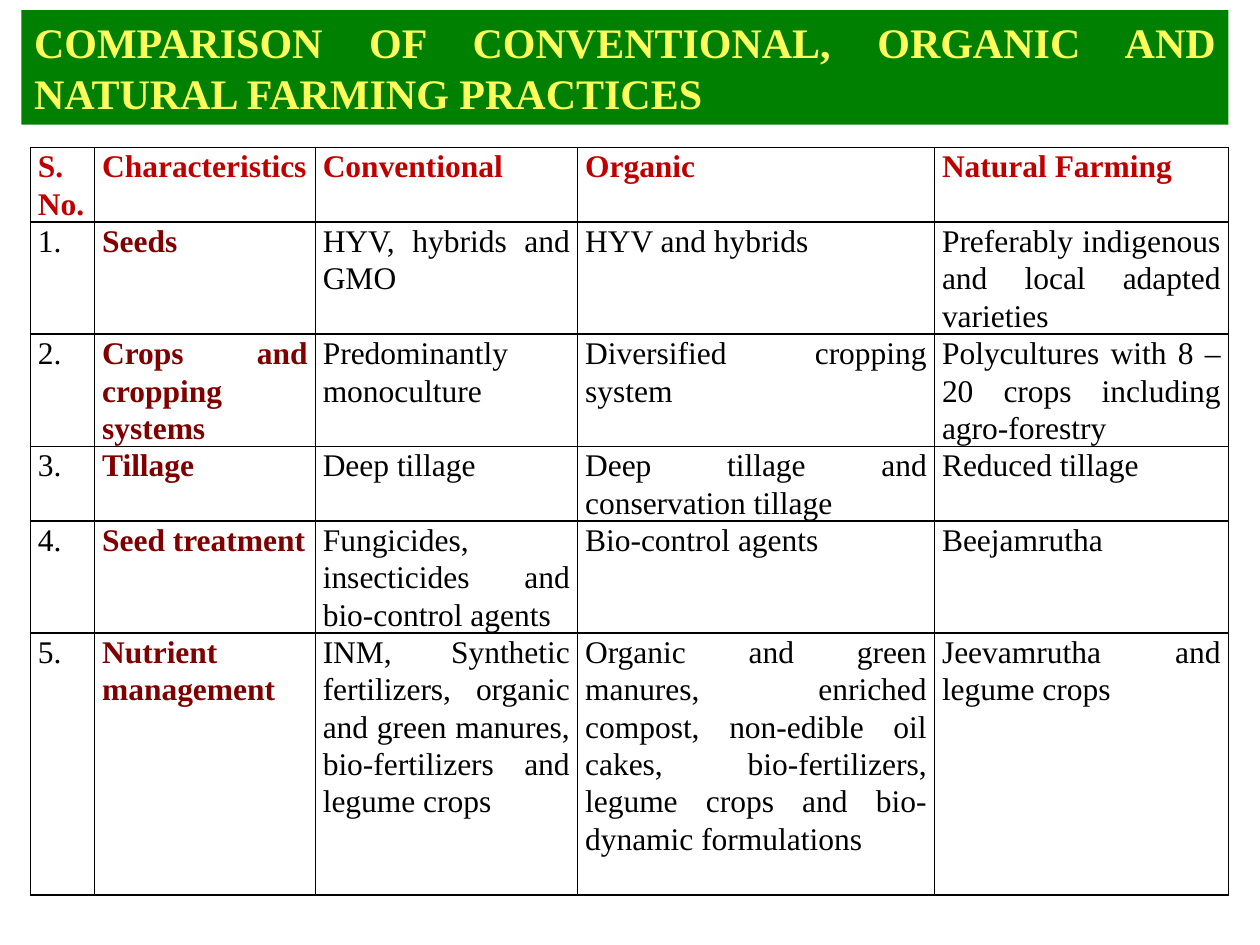
from lxml import etree
from pptx import Presentation
from pptx.dml.color import RGBColor
from pptx.enum.text import MSO_ANCHOR, MSO_AUTO_SIZE, PP_ALIGN
from pptx.oxml.ns import qn
from pptx.util import Inches, Pt

JUSTIFY = PP_ALIGN.JUSTIFY
TOP, MIDDLE = MSO_ANCHOR.TOP, MSO_ANCHOR.MIDDLE
NO_AUTOFIT = MSO_AUTO_SIZE.NONE
TITLE_ONLY_LAYOUT = 5

FONT = "Times New Roman"
COLORS = {
    "banner": "008000",
    "banner_text": "FFFF5C",
    "header": "C00000",
    "characteristic": "800000",
    "body": "000000",
    "border": "000000",
}

COLUMN_WIDTHS = [0.51, 1.75, 2.08, 2.83, 2.33]
ROW_HEIGHTS = [0.59, 0.89, 0.89, 0.59, 0.89, 2.08]
HEADERS = ["S. No.", "Characteristics", "Conventional", "Organic", "Natural Farming"]
PRACTICES = [
    ["Seeds", "HYV, hybrids and GMO", "HYV and hybrids",
     "Preferably indigenous and local adapted varieties"],
    ["Crops and cropping systems", "Predominantly monoculture",
     "Diversified cropping system",
     "Polycultures with 8 – 20 crops including agro-forestry"],
    ["Tillage", "Deep tillage", "Deep tillage and conservation tillage",
     "Reduced tillage"],
    ["Seed treatment", "Fungicides, insecticides and bio-control agents",
     "Bio-control agents", "Beejamrutha"],
    ["Nutrient management",
     "INM, Synthetic fertilizers, organic and green manures, "
     "bio-fertilizers and legume crops",
     "Organic and green manures, enriched compost, non-edible oil cakes, "
     "bio-fertilizers, legume crops and bio-dynamic formulations",
     "Jeevamrutha and legume crops"],
]


def write_text(text_frame, text, *, size, color, bold=False,
               line_spacing=1.0, space_after=0):
    text_frame.word_wrap = True
    paragraph = text_frame.paragraphs[0]
    paragraph.alignment = JUSTIFY
    paragraph.line_spacing = line_spacing
    paragraph.space_after = Pt(space_after)
    run = paragraph.add_run()
    run.text = text
    run.font.name = FONT
    run.font.size = Pt(size)
    run.font.bold = bold
    run.font.color.rgb = RGBColor.from_string(COLORS[color])


def set_cell_borders(cell, color, width):
    properties = cell._tc.get_or_add_tcPr()
    for position, side in enumerate(("lnL", "lnR", "lnT", "lnB")):
        line = etree.Element(qn(f"a:{side}"), w=str(Pt(width)))
        fill = etree.SubElement(line, qn("a:solidFill"))
        etree.SubElement(fill, qn("a:srgbClr"), val=COLORS[color])
        properties.insert(position, line)


def add_banner(slide, left, top, width, height):
    banner = slide.shapes.title
    banner.left, banner.top = Inches(left), Inches(top)
    banner.width, banner.height = Inches(width), Inches(height)
    banner.fill.solid()
    banner.fill.fore_color.rgb = RGBColor.from_string(COLORS["banner"])
    text_frame = banner.text_frame
    text_frame.auto_size = NO_AUTOFIT
    text_frame.vertical_anchor = MIDDLE
    write_text(text_frame,
               "COMPARISON OF CONVENTIONAL, ORGANIC AND NATURAL FARMING PRACTICES",
               size=24, color="banner_text", bold=True)


def cell_color(row, column):
    if row == 0:
        return "header"
    return "characteristic" if column == 1 else "body"


def add_comparison_table(slide, left, top, width, height):
    rows = [HEADERS] + [[f"{number}. ", *practice]
                        for number, practice in enumerate(PRACTICES, 1)]
    table = slide.shapes.add_table(
        len(rows), len(HEADERS),
        Inches(left), Inches(top), Inches(width), Inches(height)).table
    table.horz_banding = False

    # Column and row sizes keep their proportions within the box
    for column, share in zip(table.columns, COLUMN_WIDTHS):
        column.width = Inches(width * share / sum(COLUMN_WIDTHS))
    for row, share in zip(table.rows, ROW_HEIGHTS):
        row.height = Inches(height * share / sum(ROW_HEIGHTS))

    for row_index, texts in enumerate(rows):
        for column_index, text in enumerate(texts):
            cell = table.cell(row_index, column_index)
            cell.fill.background()
            cell.vertical_anchor = TOP
            cell.margin_left = cell.margin_right = Inches(0.06)
            cell.margin_top = cell.margin_bottom = 0
            color = cell_color(row_index, column_index)
            write_text(cell.text_frame, text, size=18, color=color,
                       bold=color != "body", line_spacing=1.07, space_after=8)
            set_cell_borders(cell, "border", 1)


def main():
    presentation = Presentation()
    presentation.slide_width = Inches(10)
    presentation.slide_height = Inches(7.5)
    slide = presentation.slides.add_slide(
        presentation.slide_layouts[TITLE_ONLY_LAYOUT])

    # Title banner above the table
    add_banner(slide, 0.17, 0.08, 9.58, 0.91)
    add_comparison_table(slide, 0.24, 1.17, 9.51, 5.93)

    presentation.save("out.pptx")


if __name__ == "__main__":
    main()
